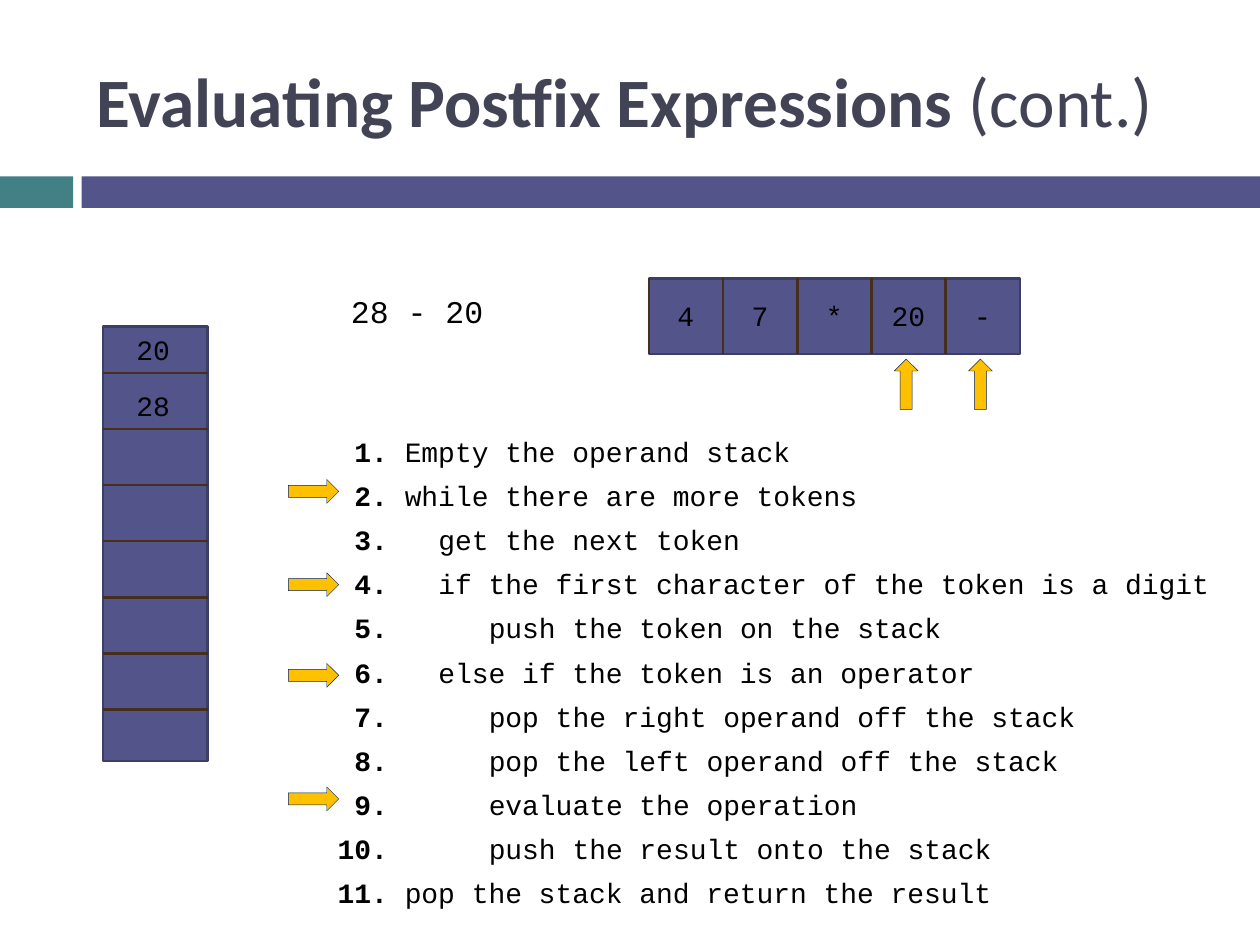
from lxml import etree
from pptx import Presentation
from pptx.dml.color import RGBColor
from pptx.enum.shapes import MSO_CONNECTOR, MSO_SHAPE
from pptx.enum.text import MSO_ANCHOR, MSO_AUTO_SIZE, PP_ALIGN
from pptx.oxml.ns import qn
from pptx.util import Pt

RECT, UP, RIGHT = MSO_SHAPE.RECTANGLE, MSO_SHAPE.UP_ARROW, MSO_SHAPE.RIGHT_ARROW
STRAIGHT = MSO_CONNECTOR.STRAIGHT
MIDDLE, LEFT, CENTER = MSO_ANCHOR.MIDDLE, PP_ALIGN.LEFT, PP_ALIGN.CENTER

COLORS = {
    "teal": "438086", "purple": "53548A", "outline": "3D3E66", "title": "424456",
    "rule": "462E1F", "arrow": "FFC000", "arrow_line": "002060",
    "white": "FFFFFF", "black": "000000",
}
MONO = "Courier New"
CHAR = 9.6  # width of one 16 pt Courier New character
LABEL_HEIGHT = 26.6

TOKENS = ["4", "7", "*", "20", "-"]
STACK = ["20", "28"]
# Column where each step's text starts, and its wording
STEPS = [
    (4, "Empty the operand stack"),
    (4, "while there are more tokens"),
    (6, "get the next token"),
    (6, "if the first character of the token is a digit"),
    (9, "push the token on the stack"),
    (6, "else if the token is an operator"),
    (9, "pop the right operand off the stack"),
    (9, "pop the left operand off the stack"),
    (9, "evaluate the operation"),
    (9, "push the result onto the stack"),
    (4, "pop the stack and return the result"),
]


def rgb(name):
    return RGBColor.from_string(COLORS[name])


def style(run, size=16, font=MONO, color="black", bold=False):
    run.font.size, run.font.name, run.font.bold = Pt(size), font, bold
    run.font.color.rgb = rgb(color)


def add_box(slide, box, fill, line=None, width=1.5, kind=RECT):
    shape = slide.shapes.add_shape(kind, *map(Pt, box))
    shape.shadow.inherit = False
    shape.fill.solid()
    shape.fill.fore_color.rgb = rgb(fill)
    if line:
        shape.line.color.rgb = rgb(line)
        shape.line.width = Pt(width)
    else:
        shape.line.fill.background()
    return shape


def add_rule(slide, x1, y1, x2, y2):
    rule = slide.shapes.add_connector(STRAIGHT, Pt(x1), Pt(y1), Pt(x2), Pt(y2))
    rule.line.color.rgb = rgb("rule")
    rule.line.width = Pt(1.5)
    etree.SubElement(rule._element.spPr, qn("a:effectLst"))


def add_label(slide, text, center, top):
    width = 14.4 + CHAR * len(text)
    label = slide.shapes.add_textbox(Pt(center - width / 2), Pt(top), Pt(width), Pt(LABEL_HEIGHT))
    label.text_frame.text = text
    style(label.text_frame.paragraphs[0].runs[0])


def add_arrow(slide, box, kind):
    add_box(slide, box, "arrow", "arrow_line", 0.25, kind)


def add_header(slide, box):
    left, top, width, height = box
    # Two-part band
    band_top = top + 82.8
    add_box(slide, (0, band_top, 41.8, 18), "teal")
    add_box(slide, (46.6, band_top, 673.4, 18), "purple")

    title = slide.shapes.title
    title.left, title.top, title.width, title.height = map(Pt, box)
    frame = title.text_frame
    frame.auto_size, frame.vertical_anchor = MSO_AUTO_SIZE.NONE, MIDDLE
    heading = frame.paragraphs[0]
    heading.alignment = LEFT
    for text, bold in [("Evaluating Postfix Expressions ", True), ("(cont.)", False)]:
        run = heading.add_run()
        run.text = text
        style(run, 39.6, "Calibri", "title", bold)


def add_stack(slide, box, first_row=26.6, row=32.05):
    left, top, width, height = box
    add_box(slide, box, "purple", "outline")
    for i in range(7):
        y = top + first_row + i * row
        add_rule(slide, left, y, left + width, y)
        if i < len(STACK):
            add_label(slide, STACK[i], left + width / 2 - 1.2, y - LABEL_HEIGHT)


def add_tokens(slide, box, current=(3, 4)):
    left, top, width, height = box
    cell = width / len(TOKENS)
    add_box(slide, box, "purple", "outline")
    for i, token in enumerate(TOKENS):
        x = left + i * cell
        center = x + cell / 2
        add_rule(slide, x, top, x, top + height)
        add_label(slide, token, center, top + 7.9)
        if i in current:
            add_arrow(slide, (center - 8.2, top + height + 2.9, 13.7, 28.8), UP)


def add_expression(slide, box):
    frame = add_box(slide, box, "white").text_frame
    frame.vertical_anchor = MIDDLE
    frame.text = "28 - 20"
    frame.paragraphs[0].alignment = CENTER
    style(frame.paragraphs[0].runs[0], 18)


def add_algorithm(slide, box, arrow_centers):
    left, top, width, height = box
    frame = slide.shapes.add_textbox(*map(Pt, box)).text_frame
    frame.word_wrap = True
    for number, (column, text) in enumerate(STEPS, 1):
        step = frame.paragraphs[0] if number == 1 else frame.add_paragraph()
        step.line_spacing, step.space_after = Pt(19.2), Pt(6)
        # Right-aligned numbers, then a tab to the step's own column
        margin = Pt(column * CHAR)
        lead = Pt(CHAR) if number < 10 else 0
        props = step._p.get_or_add_pPr()
        props.set("marL", str(margin))
        props.set("indent", str(lead - margin))
        tabs = etree.SubElement(props, qn("a:tabLst"))
        etree.SubElement(tabs, qn("a:tab"), pos=str(margin), algn="l")
        for part, bold in [(f"{number}.\t", True), (text, False)]:
            run = step.add_run()
            run.text = part
            style(run, bold=bold)

    # Arrows at the steps being run
    for center in arrow_centers:
        add_arrow(slide, (left - 21, center - 6.85, 28.8, 13.7), RIGHT)


def main():
    deck = Presentation()
    deck.slide_width, deck.slide_height = Pt(720), Pt(540)
    slide = deck.slides.add_slide(deck.slide_layouts[5])
    add_header(slide, (48.2, 18, 642.2, 77.8))
    add_stack(slide, (59, 186.5, 59.8, 248.4))
    add_expression(slide, (164.9, 149.8, 146.9, 55.4))
    add_tokens(slide, (370.8, 159.1, 212, 43.2))
    add_algorithm(slide, (185.8, 244.8, 534.2, 280.8), (280.8, 334.1, 385.9, 456.5))
    deck.save("out.pptx")


if __name__ == "__main__":
    main()
